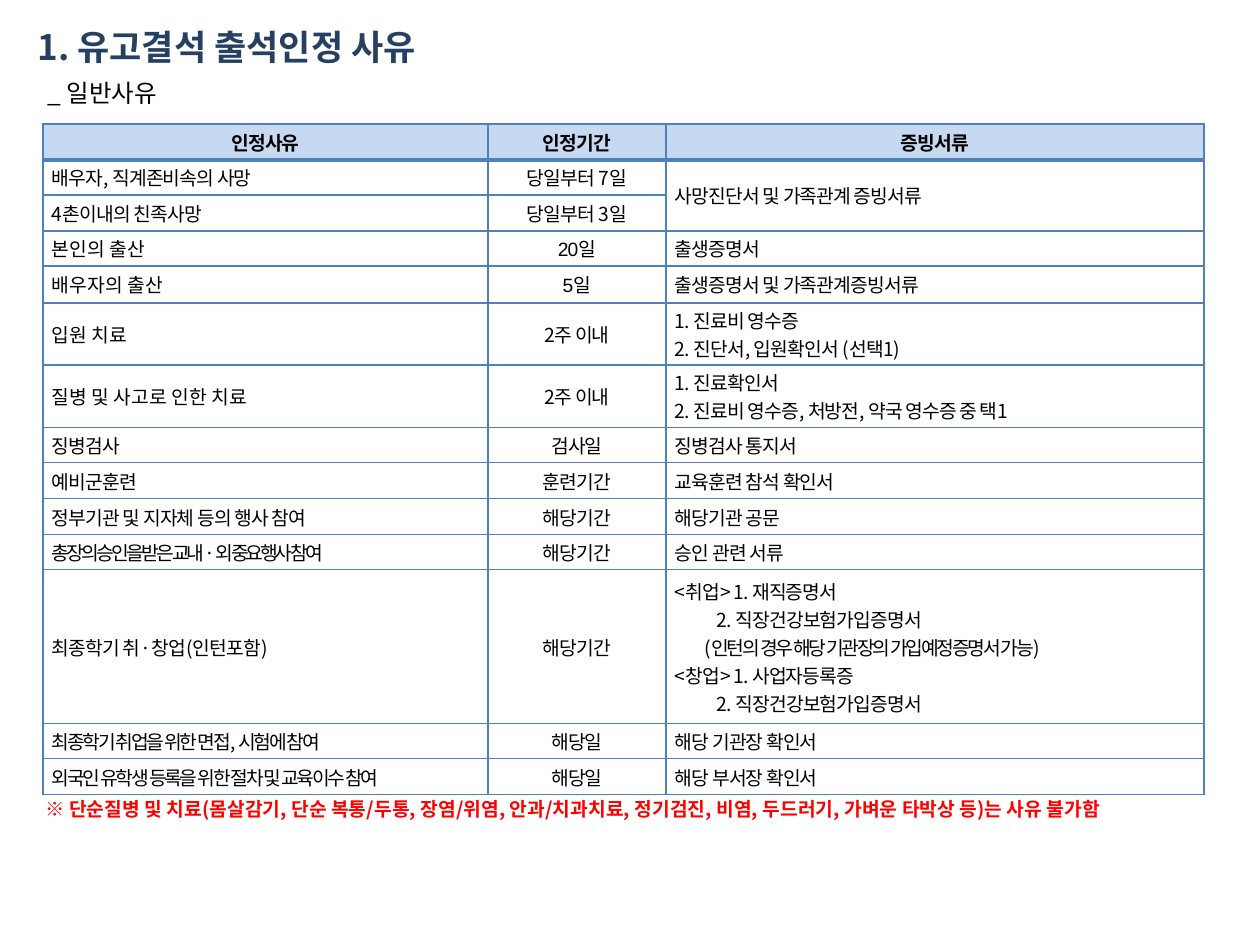
import pptx
import pptx.dml.color
import pptx.enum.text
import pptx.oxml
import pptx.oxml.ns
import pptx.util

PX = 914400 // 126
COLORS = {"title": "254061", "text": "000000", "note": "FF0000", "header": "C6D9F1", "border": "4F81BD"}
KOREAN = "Noto Sans CJK KR"
ALIGN = pptx.enum.text.PP_ALIGN


def add_run(paragraph, text, size, color, bold=False, spacing=0, font=KOREAN):
    run = paragraph.add_run()
    run.text = text
    run.font.size = pptx.util.Pt(size)
    run.font.bold = bold
    run.font.name = font
    run.font.color.rgb = pptx.dml.color.RGBColor.from_string(COLORS[color])
    properties = run._r.get_or_add_rPr()
    properties.set("spc", str(round(spacing * 100)))
    east_asian = pptx.oxml.parse_xml(f'<a:ea {pptx.oxml.ns.nsdecls("a")} typeface="{KOREAN}"/>')
    properties.find(pptx.oxml.ns.qn("a:latin")).addnext(east_asian)


def add_border(cell, side, points):
    cell._tc.get_or_add_tcPr().append(pptx.oxml.parse_xml(
        f'<a:{side} {pptx.oxml.ns.nsdecls("a")} w="{points * 12700}"><a:solidFill>'
        f'<a:srgbClr val="{COLORS["border"]}"/></a:solidFill></a:{side}>'))


deck = pptx.Presentation()
deck.slide_width = 1260 * PX
deck.slide_height = 945 * PX
slide = deck.slides.add_slide(deck.slide_layouts[6])

captions = [
    ((25, 26, 446, 55), "1. 유고결석 출석인정 사유", 20, "title", True, False),
    ((35, 76, 144, 43), "_ 일반사유", 14, "text", False, False),
    ((33, 795, 1184, 58),
     "※ 단순질병 및 치료(몸살감기, 단순 복통/두통, 장염/위염, 안과/치과치료, 정기검진, 비염, 두드러기, "
     "가벼운 타박상 등)는 사유 불가함", 11, "note", True, True),
]
for box, text, size, color, bold, wraps in captions:
    frame = slide.shapes.add_textbox(*(value * PX for value in box)).text_frame
    frame.word_wrap = wraps
    frame.paragraphs[0].line_spacing = 0.85
    add_run(frame.paragraphs[0], text, size, color, bold)

rows = [
    (36, "인정사유", "인정기간", ["증빙서류"]),
    (35, "배우자, 직계존비속의 사망", "당일부터 7일", ["사망진단서 및 가족관계 증빙서류"]),
    (36, "4촌이내의 친족사망", "당일부터 3일", []),
    (35, "본인의 출산", "20일", ["출생증명서"]),
    (37, "배우자의 출산", "5일", ["출생증명서 및 가족관계증빙서류"]),
    (62, "입원 치료", "2주 이내", ["1. 진료비 영수증", "2. 진단서, 입원확인서 (선택1)"]),
    (63, "질병 및 사고로 인한 치료", "2주 이내",
     ["1. 진료확인서", "2. 진료비 영수증, 처방전, 약국 영수증 중 택1"]),
    (35, "징병검사", "검사일", ["징병검사 통지서"]),
    (36, "예비군훈련", "훈련기간", ["교육훈련 참석 확인서"]),
    (36, "정부기관 및 지자체 등의 행사 참여", "해당기간", ["해당기관 공문"]),
    (35, "총장의 승인을 받은 교내·외 중요행사 참여", "해당기간", ["승인 관련 서류"]),
    (154, "최종학기 취·창업(인턴포함)", "해당기간",
     ["<취업> 1. 재직증명서", "2. 직장건강보험가입증명서",
      "(인턴의 경우 해당 기관장의 가입예정증명서 가능)",
      "<창업> 1. 사업자등록증", "2. 직장건강보험가입증명서"]),
    (35, "최종학기 취업을 위한 면접, 시험에 참여", "해당일", ["해당 기관장 확인서"]),
    (36, "외국인 유학생 등록을 위한 절차 및 교육이수 참여", "해당일", ["해당 부서장 확인서"]),
]
columns = [445, 178, 538]
reason_spacing = {3: 0, 4: 0, 5: 0, 6: 0, 10: -1.8, 12: -1.3, 13: -1.3}
arial_cells = [(3, 1), (4, 1), (13, 0)]
employment_row = 11
line_indents = [0, 42, 30, 0, 42]

table = slide.shapes.add_table(
    len(rows), len(columns), 43 * PX, 124 * PX, sum(columns) * PX, sum(row[0] for row in rows) * PX).table
table.first_row = False
table.horz_banding = False
for column, width in zip(table.columns, columns):
    column.width = width * PX

for r, (height, reason, period, documents) in enumerate(rows):
    table.rows[r].height = height * PX
    for c, lines in enumerate([[reason], [period], documents]):
        cell = table.cell(r, c)
        cell.vertical_anchor = pptx.enum.text.MSO_ANCHOR.MIDDLE
        cell.margin_left = cell.margin_right = 9 * PX
        cell.margin_top = cell.margin_bottom = 2 * PX
        for side in ("lnL", "lnR", "lnT", "lnB"):
            under_header = (r, side) in [(0, "lnB"), (1, "lnT")]
            add_border(cell, side, 2 if under_header else 1)
        if r == 0:
            cell.fill.solid()
            cell.fill.fore_color.rgb = pptx.dml.color.RGBColor.from_string(COLORS["header"])
        else:
            cell.fill.background()
        for i, line in enumerate(lines):
            paragraph = cell.text_frame.paragraphs[0] if i == 0 else cell.text_frame.add_paragraph()
            paragraph.alignment = ALIGN.CENTER if r == 0 or c == 1 else ALIGN.JUSTIFY
            spacing = reason_spacing.get(r, -0.5) if c == 0 else -0.5
            if r == employment_row and c == 2:
                paragraph._p.get_or_add_pPr().set("marL", str(line_indents[i] * PX))
                spacing = -1.3 if i == 2 else -0.5
            font = "Arial" if (r, c) in arial_cells else KOREAN
            add_run(paragraph, line, 11, "text", r == 0, spacing, font)

table.cell(1, 2).merge(table.cell(2, 2))

deck.save("out.pptx")
